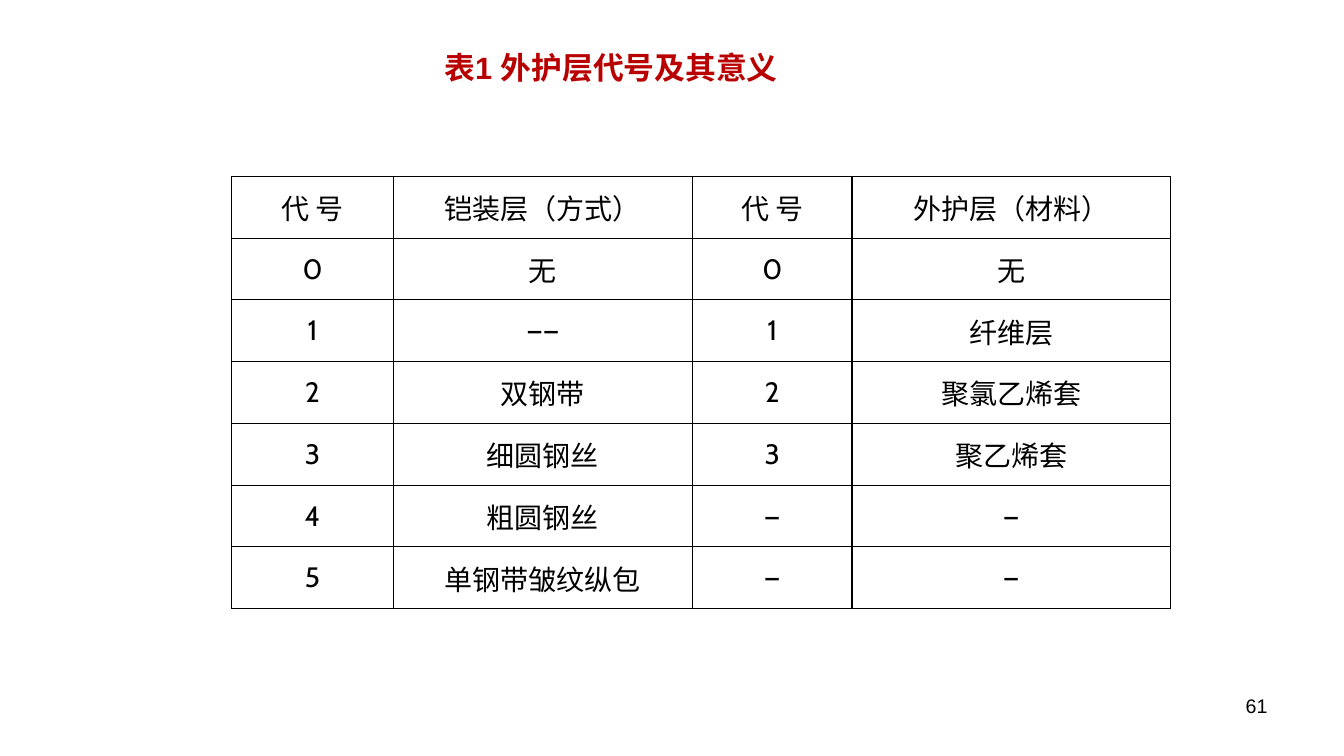
from dataclasses import dataclass

import pptx
import pptx.dml.color
import pptx.enum.text
import pptx.oxml
import pptx.oxml.ns
import pptx.util

Inches = pptx.util.Inches
Align = pptx.enum.text.PP_ALIGN


@dataclass(frozen=True)
class Theme:
    title_color: str = "B90000"
    ink: str = "000000"
    title_size: int = 22
    table_size: int = 20
    number_size: int = 14
    text_font: str = "Arial"
    table_font: str = "Cabin"
    border_width: int = 1


@dataclass(frozen=True)
class Area:
    left: float
    top: float
    width: float
    height: float

    def lengths(self) -> list:
        return [Inches(v) for v in (self.left, self.top, self.width, self.height)]


@dataclass(frozen=True)
class Label:
    text: str
    area: Area
    size: int
    color: str
    align: Align
    bold: bool = False


THEME = Theme()

LABELS = [
    Label("61", Area(9.56, 6.83, 3.11, 0.52), THEME.number_size, THEME.ink, Align.RIGHT),
    Label("表1 外护层代号及其意义", Area(1.81, 0.43, 8.5, 0.6),
          THEME.title_size, THEME.title_color, Align.CENTER, bold=True),
]

TABLE_AREA = Area(2.3, 1.75, 9.31, 4.29)
COLUMN_WIDTHS = [1.6, 2.97, 1.58, 3.16]
CODE_ROWS = [
    ("代 号", "铠装层（方式）", "代 号", "外护层（材料）"),
    ("0", "无", "0", "无"),
    ("1", "——", "1", "纤维层"),
    ("2", "双钢带", "2", "聚氯乙烯套"),
    ("3", "细圆钢丝", "3", "聚乙烯套"),
    ("4", "粗圆钢丝", "—", "—"),
    ("5", "单钢带皱纹纵包", "—", "—"),
]


def write_text(frame, text: str, *, size: int, color: str, font: str,
               align: Align, bold: bool = False) -> None:
    frame.word_wrap = True
    para = frame.paragraphs[0]
    para.alignment = align
    span = para.add_run()
    span.text = text
    span.font.name = font
    span.font.size = pptx.util.Pt(size)
    span.font.bold = bold
    span.font.color.rgb = pptx.dml.color.RGBColor.from_string(color)


def add_label(page, label: Label) -> None:
    box = page.shapes.add_textbox(*label.area.lengths())
    write_text(box.text_frame, label.text, size=label.size, color=label.color,
               font=THEME.text_font, align=label.align, bold=label.bold)


def add_borders(cell) -> None:
    properties = cell._tc.get_or_add_tcPr()
    width = pptx.util.Pt(THEME.border_width)
    # Border lines come before the fill in the cell properties
    for position, side in enumerate(("lnL", "lnR", "lnT", "lnB")):
        properties.insert(position, pptx.oxml.parse_xml(
            f'<a:{side} {pptx.oxml.ns.nsdecls("a")} w="{width}"><a:solidFill>'
            f'<a:srgbClr val="{THEME.ink}"/></a:solidFill></a:{side}>'))


def add_code_table(page) -> None:
    shape = page.shapes.add_table(
        len(CODE_ROWS), len(COLUMN_WIDTHS), *TABLE_AREA.lengths())
    table = shape.table
    table.first_row = False
    table.horz_banding = False
    for column, width in zip(table.columns, COLUMN_WIDTHS):
        column.width = Inches(width)
    for row, texts in zip(table.rows, CODE_ROWS):
        row.height = Inches(TABLE_AREA.height / len(CODE_ROWS))
        for cell, text in zip(row.cells, texts):
            cell.margin_left = cell.margin_right = 0
            cell.margin_top = cell.margin_bottom = 0
            cell.vertical_anchor = pptx.enum.text.MSO_ANCHOR.MIDDLE
            cell.fill.background()
            add_borders(cell)
            write_text(cell.text_frame, text, size=THEME.table_size, color=THEME.ink,
                       font=THEME.table_font, align=Align.CENTER)


def main() -> None:
    deck = pptx.Presentation()
    deck.slide_width, deck.slide_height = Inches(13.33), Inches(7.5)
    page = deck.slides.add_slide(deck.slide_layouts[6])

    # Page number and title
    for label in LABELS:
        add_label(page, label)

    # Table of sheath codes
    add_code_table(page)

    deck.save("out.pptx")


if __name__ == "__main__":
    main()
